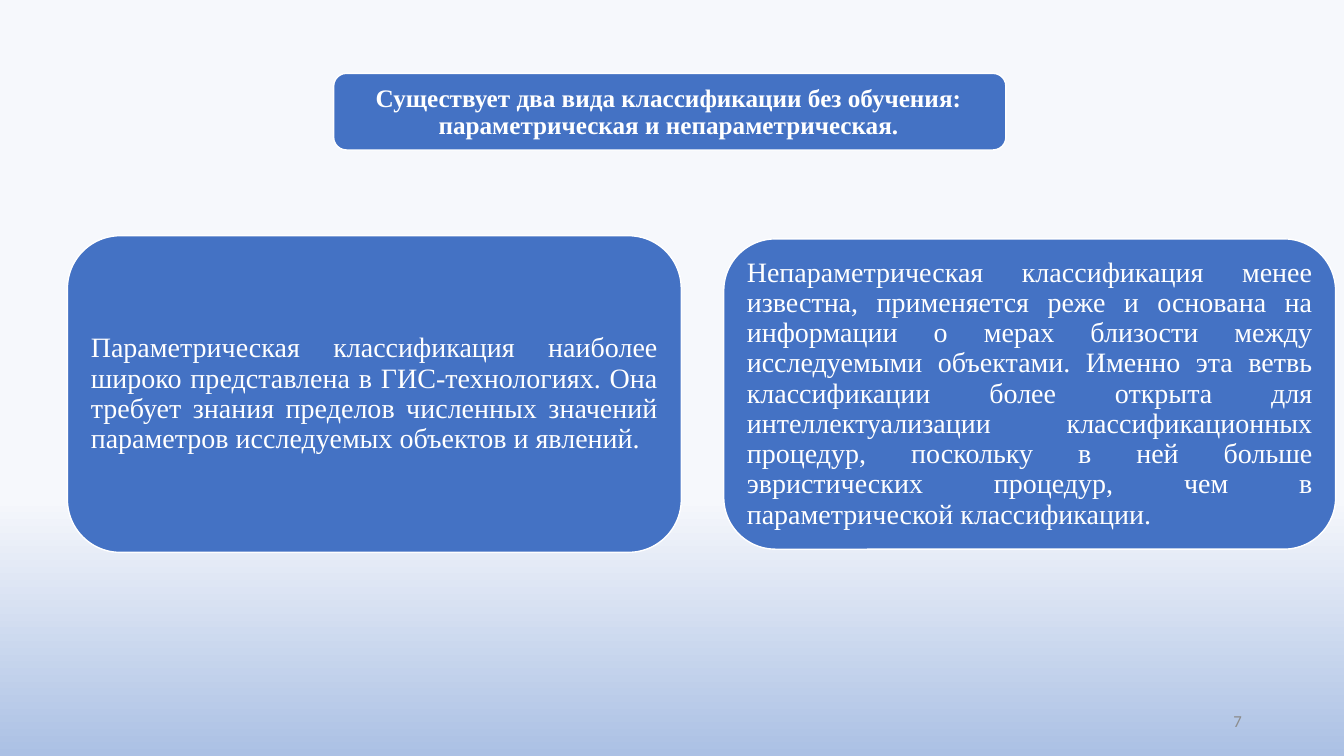
from pptx import Presentation
from pptx.dml.color import RGBColor
from pptx.enum.shapes import MSO_SHAPE
from pptx.enum.text import MSO_ANCHOR, MSO_AUTO_SIZE, PP_ALIGN
from pptx.util import Cm, Pt

SERIF = "Times New Roman"
TITLE = ("Существует два вида классификации без обучения: "
         "параметрическая и непараметрическая.")
NONPARAMETRIC = (
    "Непараметрическая классификация менее известна, применяется реже и "
    "основана на информации о мерах близости между исследуемыми объектами. "
    "Именно эта ветвь классификации более открыта для интеллектуализации "
    "классификационных процедур, поскольку в ней больше эвристических "
    "процедур, чем в параметрической классификации.")
PARAMETRIC = (
    "Параметрическая классификация наиболее широко представлена в "
    "ГИС-технологиях. Она требует знания пределов численных значений "
    "параметров исследуемых объектов и явлений.")


def rgb(value):
    """Turn a hex string into a colour."""
    return RGBColor.from_string(value)


def set_background(slide):
    """Fill the slide with a gradient that darkens towards the bottom."""
    fill = slide.background.fill
    fill.gradient()
    fill.gradient_angle = 270
    stops = ((0.66, "F6F8FC"), (1, "ABC0E4"))
    for stop, (position, color) in zip(fill.gradient_stops, stops):
        stop.position = position
        stop.color.rgb = rgb(color)


def write(sp, text, size, align, color="FFFFFF", font=SERIF, bold=False,
          spacing=0.9, inset=0.2):
    """Write one formatted paragraph in the middle of a shape."""
    tf = sp.text_frame
    tf.word_wrap = True
    tf.auto_size = MSO_AUTO_SIZE.NONE
    tf.vertical_anchor = MSO_ANCHOR.MIDDLE
    tf.margin_left = tf.margin_right = Cm(inset)
    tf.margin_top = tf.margin_bottom = Cm(inset)
    p = tf.paragraphs[0]
    p.text = text
    p.alignment = align
    p.line_spacing = spacing
    p.font.name = font
    p.font.size = Pt(size)
    p.font.bold = bold
    p.font.color.rgb = rgb(color)


def add_panel(slide, left, top, width, height):
    """Add a blue rounded panel with a white outline."""
    sp = slide.shapes.add_shape(MSO_SHAPE.ROUNDED_RECTANGLE, Cm(left),
                                Cm(top), Cm(width), Cm(height))
    sp.shadow.inherit = False
    sp.fill.solid()
    sp.fill.fore_color.rgb = rgb("4472C4")
    sp.line.color.rgb = rgb("FFFFFF")
    sp.line.width = Pt(1)
    return sp


def add_title(slide):
    """Place the slide title on its own panel."""
    panel = add_panel(slide, 8.41, 1.85, 16.94, 1.93)
    title = slide.shapes.title
    title.left, title.top = Cm(8.48), Cm(1.96)
    title.width, title.height = Cm(16.74), Cm(1.75)
    write(title, TITLE, 18, PP_ALIGN.CENTER, bold=True)
    panel.element.addnext(title.element)


def add_page_number(slide, number):
    """Add the page number at the bottom right."""
    sp = slide.shapes.add_textbox(Cm(23.93), Cm(17.65), Cm(7.62), Cm(1.02))
    write(sp, number, 12, PP_ALIGN.RIGHT, color="8C8C8C", font="Calibri",
          spacing=1, inset=0.25)


def main():
    """Build and save the slide."""
    prs = Presentation()
    prs.slide_width, prs.slide_height = Cm(33.87), Cm(19.05)
    slide = prs.slides.add_slide(prs.slide_layouts[5])
    set_background(slide)
    add_page_number(slide, "7")
    add_title(slide)
    panels = (((18.24, 6.02, 15.42, 7.82), NONPARAMETRIC),
              ((1.7, 5.94, 15.47, 7.98), PARAMETRIC))
    for box, text in panels:
        write(add_panel(slide, *box), text, 20, PP_ALIGN.JUSTIFY)
    prs.save("out.pptx")


if __name__ == "__main__":
    main()
